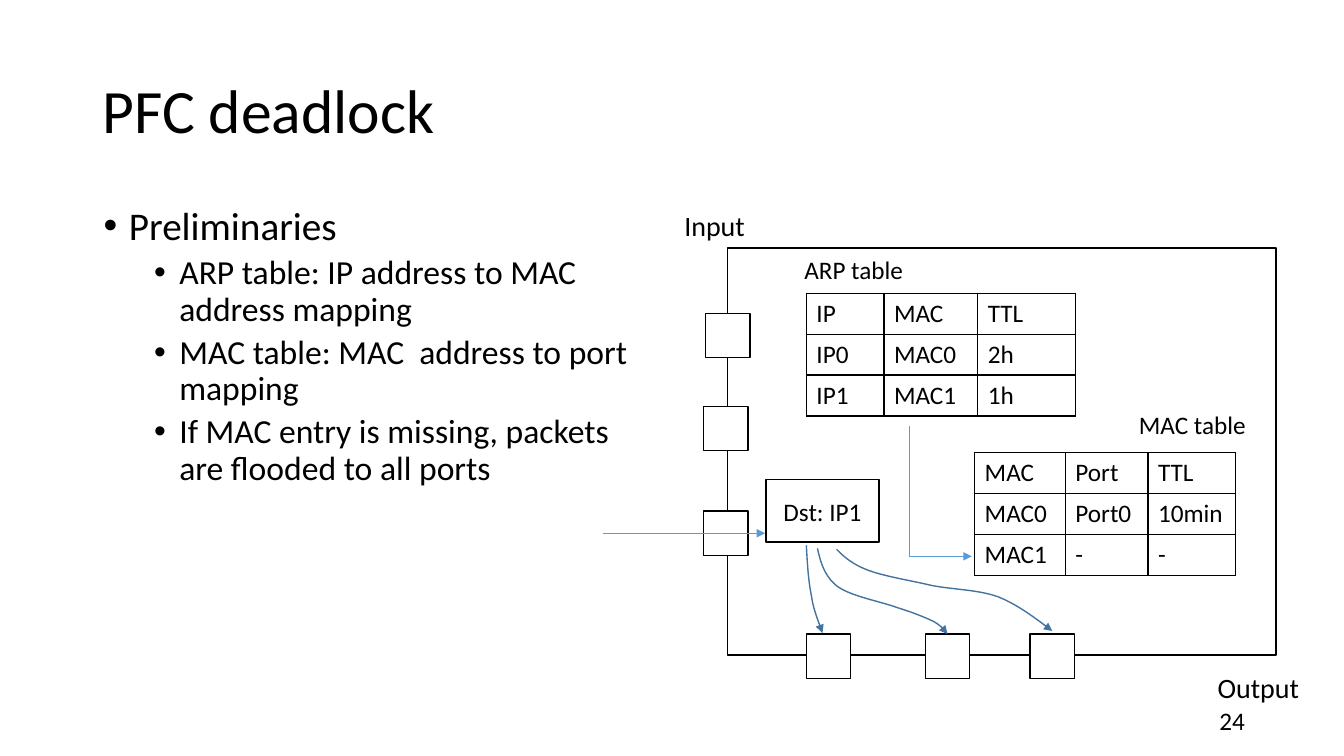
from dataclasses import dataclass
from typing import NamedTuple

from lxml.etree import SubElement
from pptx import Presentation
from pptx.dml.color import RGBColor as Color
from pptx.enum.shapes import MSO_CONNECTOR as Connector, MSO_SHAPE as ShapeKind
from pptx.enum.text import MSO_ANCHOR as Anchor, MSO_AUTO_SIZE as AutoSize, PP_ALIGN as Align
from pptx.oxml.ns import qn
from pptx.shapes.base import BaseShape
from pptx.slide import Slide
from pptx.text.text import _Paragraph as Paragraph
from pptx.util import Pt


@dataclass(frozen=True)
class Theme:
    font: str = "Calibri"
    ink: Color = Color(0, 0, 0)
    paper: Color = Color(255, 255, 255)
    arrow: Color = Color(0x5B, 0x9B, 0xD5)
    curve: Color = Color(0x43, 0x73, 0x9E)
    title: int = 44
    topic: int = 28
    point: int = 24
    side: int = 20
    small: int = 18


THEME = Theme()


class Point(NamedTuple):
    x: float
    y: float


class Frame(NamedTuple):
    left: float
    top: float
    width: float
    height: float


class Label(NamedTuple):
    text: str
    frame: Frame
    size: int
    wrap: bool = False
    anchor: Anchor = Anchor.TOP
    line_spacing: float = 1.0


class Bullet(NamedTuple):
    text: str
    size: int
    margin: float
    space_before: float


class Line(NamedTuple):
    start: Point
    end: Point
    arrow: bool = True


class Grid(NamedTuple):
    left: float
    top: float
    widths: list[float]
    rows: list[list[str]]


TIGHT = 0.9
BULLET_INDENT = 18
ROW_HEIGHT = 29.2
PORT_SIZE = 31.7
CURVE_STEPS = 10

LABELS = [
    Label("24", Frame(864, 500.4, 36, 28.8), THEME.small),
    Label("PFC deadlock", Frame(66.2, 28.8, 828, 104.4), THEME.title,
          True, Anchor.MIDDLE, TIGHT),
    Label("Input", Frame(481.7, 145.4, 58.3, 31.7), THEME.side),
    Label("Output", Frame(862.6, 475.2, 73.4, 31.7), THEME.side),
    Label("ARP table", Frame(567.4, 177.8, 85.7, 28.8), THEME.small),
    Label("MAC table", Frame(806.4, 288.7, 91.4, 28.8), THEME.small),
]
BODY = Frame(67, 144, 392.4, 342.7)
BULLETS = [Bullet("Preliminaries", THEME.topic, 18, 10)] + [
    Bullet(text, THEME.point, 54, 5)
    for text in (
        "ARP table: IP address to MAC address mapping",
        "MAC table: MAC  address to port mapping",
        "If MAC entry is missing, packets are flooded to all ports",
    )
]
SWITCH = Frame(519.8, 177.1, 391.7, 290.9)
PACKET = Frame(547.2, 342.7, 80.6, 44.6)
PORTS = [
    Point(504, 223.9), Point(502.6, 290.2), Point(502.6, 365),
    Point(735.8, 452.9), Point(661, 452.9), Point(576, 452.9),
]
GRIDS = [
    Grid(576, 209.5, [55.4, 67, 69.8],
         [["IP", "MAC", "TTL"], ["IP0", "MAC0", "2h"], ["IP1", "MAC1", "1h"]]),
    Grid(696.2, 323.3, [64.8, 59, 62.6],
         [["MAC", "Port", "TTL"], ["MAC0", "Port0", "10min"], ["MAC1", "-", "-"]]),
]
LINES = [
    Line(Point(649.4, 304.6), Point(649.4, 397.4), False),
    Line(Point(649.4, 397.4), Point(694.1, 397.4)),
    Line(Point(430.6, 380.9), Point(546.5, 380.9)),
]
CURVES = [
    [Point(576, 389.5), Point(576.7, 402.5), Point(577.4, 414.7), Point(579.6, 425.5),
     Point(581, 435.6), Point(584.6, 443.5), Point(587.5, 452.2)],
    [Point(583.9, 391.7), Point(586.1, 401.8), Point(589, 411.8), Point(598.3, 419),
     Point(608.4, 426.2), Point(630, 429.8), Point(641.5, 434.2), Point(653, 437.8),
     Point(661.7, 441.4), Point(667.4, 444.2), Point(673.2, 447.8), Point(674.6, 450),
     Point(676.8, 452.9)],
    [Point(597.6, 392.4), Point(603.4, 398.2), Point(609.1, 403.2), Point(620.6, 407.5),
     Point(632.2, 411.8), Point(650.9, 414.7), Point(666, 418.3), Point(681.8, 421.2),
     Point(698.4, 421.2), Point(712.8, 426.2), Point(727.2, 432), Point(739.4, 441.4),
     Point(751.7, 450.7)],
]


def style_text(paragraph: Paragraph, text: str, size: int) -> None:
    paragraph.text = text
    paragraph.font.name = THEME.font
    paragraph.font.size = Pt(size)
    paragraph.font.color.rgb = THEME.ink


def add_label(slide: Slide, label: Label) -> None:
    text_frame = slide.shapes.add_textbox(*map(Pt, label.frame)).text_frame
    text_frame.word_wrap = label.wrap
    text_frame.auto_size = AutoSize.NONE if label.wrap else AutoSize.SHAPE_TO_FIT_TEXT
    text_frame.vertical_anchor = label.anchor
    text_frame.paragraphs[0].line_spacing = label.line_spacing
    style_text(text_frame.paragraphs[0], label.text, label.size)


def add_bullets(slide: Slide, frame: Frame, bullets: list[Bullet]) -> None:
    text_frame = slide.shapes.add_textbox(*map(Pt, frame)).text_frame
    text_frame.word_wrap = True
    for index, bullet in enumerate(bullets):
        paragraph = text_frame.add_paragraph() if index else text_frame.paragraphs[0]
        paragraph.line_spacing = TIGHT
        paragraph.space_before = Pt(bullet.space_before)
        properties = paragraph._p.get_or_add_pPr()
        properties.set("marL", str(Pt(bullet.margin)))
        properties.set("indent", str(-Pt(BULLET_INDENT)))
        SubElement(properties, qn("a:buFont"), typeface="Arial")
        SubElement(properties, qn("a:buChar"), char="•")
        style_text(paragraph, bullet.text, bullet.size)


def add_box(slide: Slide, frame: Frame, text: str = "") -> None:
    shape = slide.shapes.add_shape(ShapeKind.RECTANGLE, *map(Pt, frame))
    shape.shadow.inherit = False
    shape.fill.solid()
    shape.fill.fore_color.rgb = THEME.paper
    shape.line.color.rgb = THEME.ink
    shape.line.width = Pt(1)
    if text:
        paragraph = shape.text_frame.paragraphs[0]
        shape.text_frame.vertical_anchor = Anchor.MIDDLE
        paragraph.alignment = Align.CENTER
        style_text(paragraph, text, THEME.small)


def add_grid(slide: Slide, grid: Grid) -> None:
    frame = Frame(grid.left, grid.top, sum(grid.widths), ROW_HEIGHT * len(grid.rows))
    table = slide.shapes.add_table(len(grid.rows), len(grid.widths), *map(Pt, frame)).table
    table.first_row = table.horz_banding = False
    for column, width in zip(table.columns, grid.widths):
        column.width = Pt(width)
    for row, texts in zip(table.rows, grid.rows):
        row.height = Pt(ROW_HEIGHT)
        for cell, text in zip(row.cells, texts):
            properties = cell._tc.get_or_add_tcPr()
            for side in ("a:lnL", "a:lnR", "a:lnT", "a:lnB"):
                border = SubElement(properties, qn(side), w=str(Pt(1)))
                fill = SubElement(border, qn("a:solidFill"))
                SubElement(fill, qn("a:srgbClr"), val=str(THEME.ink))
            cell.fill.background()
            style_text(cell.text_frame.paragraphs[0], text, THEME.small)


def add_arrowhead(shape: BaseShape) -> None:
    SubElement(shape.element.spPr.find(qn("a:ln")), qn("a:tailEnd"), type="triangle")


def add_line(slide: Slide, line: Line) -> None:
    connector = slide.shapes.add_connector(
        Connector.STRAIGHT, *map(Pt, line.start + line.end))
    connector.line.color.rgb = THEME.arrow
    connector.line.width = Pt(0.5)
    if line.arrow:
        add_arrowhead(connector)
    SubElement(connector.element.spPr, qn("a:effectLst"))


def bezier(controls: list[Point], t: float) -> Point:
    weights = ((1 - t) ** 3, 3 * t * (1 - t) ** 2, 3 * t * t * (1 - t), t ** 3)
    return Point(*(sum(w * v for w, v in zip(weights, axis)) for axis in zip(*controls)))


def add_curve(slide: Slide, controls: list[Point]) -> None:
    points = [
        bezier(controls[first:first + 4], step / CURVE_STEPS)
        for first in range(0, len(controls) - 1, 3)
        for step in range(1, CURVE_STEPS + 1)
    ]
    builder = slide.shapes.build_freeform(*map(Pt, controls[0]))
    builder.add_line_segments([(Pt(x), Pt(y)) for x, y in points], close=False)
    shape = builder.convert_to_shape()
    shape.shadow.inherit = False
    shape.fill.background()
    shape.line.color.rgb = THEME.curve
    shape.line.width = Pt(1)
    add_arrowhead(shape)


def main() -> None:
    presentation = Presentation()
    presentation.slide_width, presentation.slide_height = Pt(960), Pt(540)
    slide = presentation.slides.add_slide(presentation.slide_layouts[6])
    add_bullets(slide, BODY, BULLETS)
    add_box(slide, SWITCH)
    for grid in GRIDS:
        add_grid(slide, grid)
    for port in PORTS:
        add_box(slide, Frame(*port, PORT_SIZE, PORT_SIZE))
    for line in LINES:
        add_line(slide, line)
    add_box(slide, PACKET, "Dst: IP1")
    for curve in CURVES:
        add_curve(slide, curve)
    for label in LABELS:
        add_label(slide, label)
    presentation.save("out.pptx")


if __name__ == "__main__":
    main()
